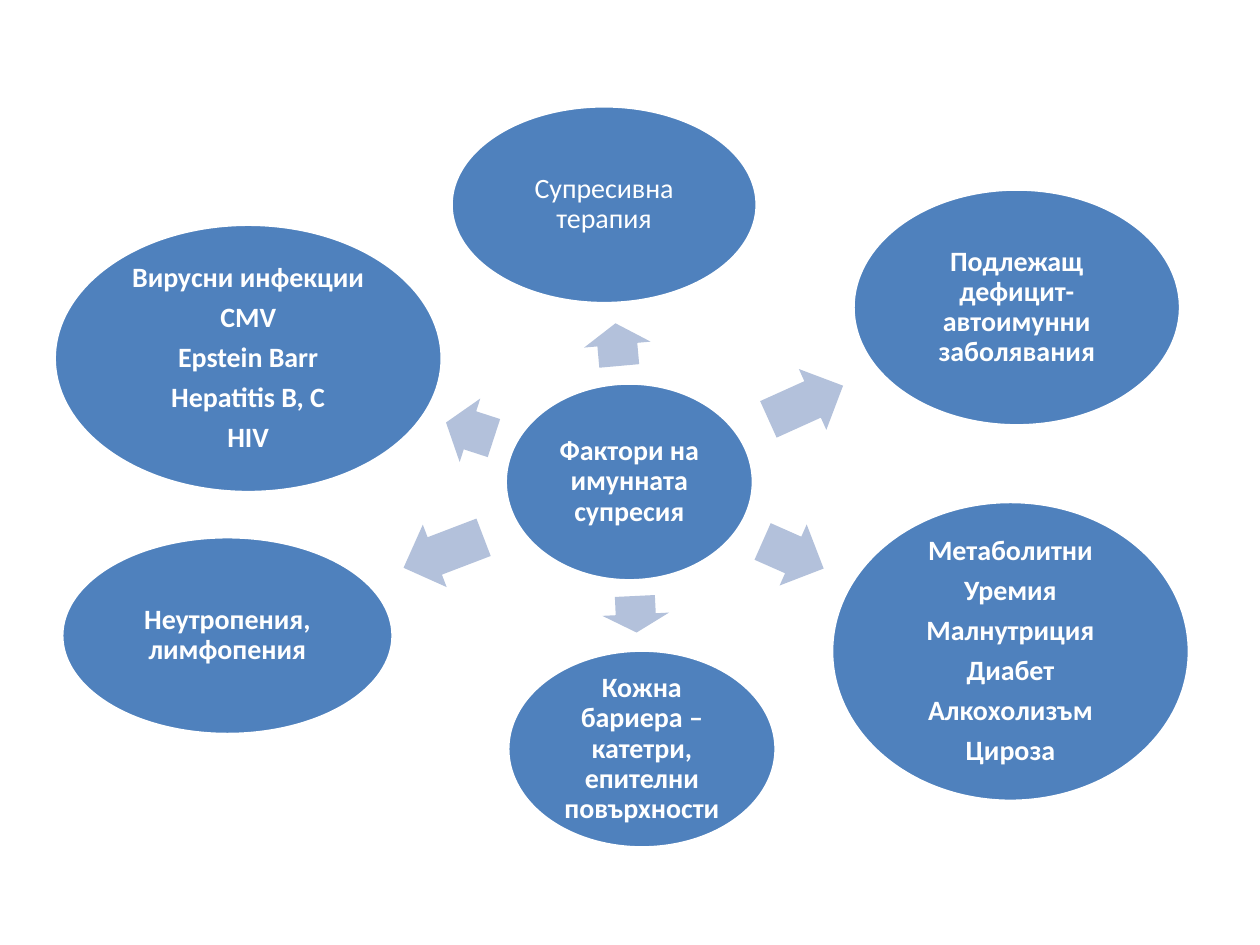
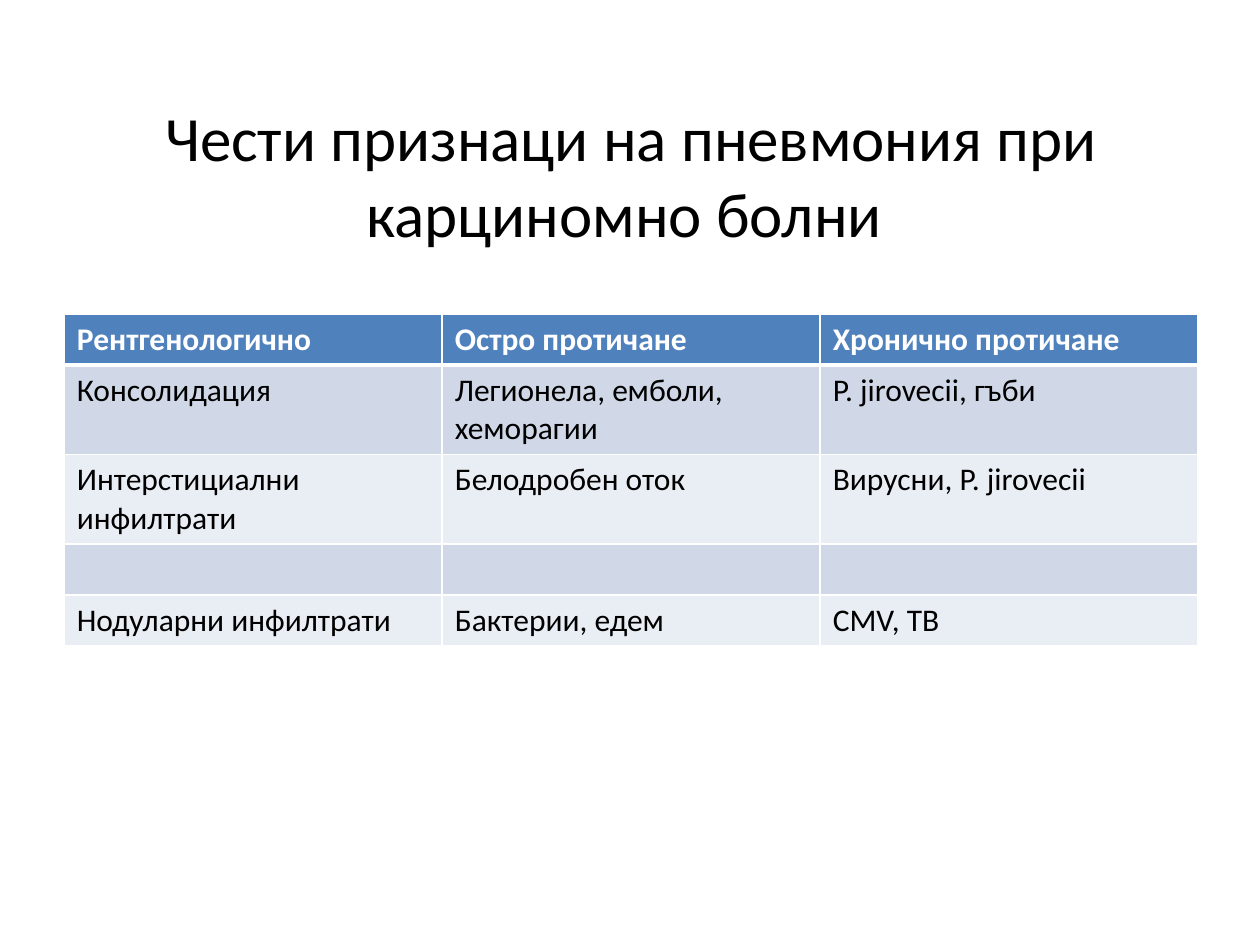
from lxml import etree
from pptx import Presentation
from pptx import util as u
from pptx.dml.color import RGBColor
from pptx.enum import shapes, text
from pptx.oxml import ns

FONT = "Calibri"
COLORS = {
    "blue": "4F81BD",
    "arrow": "B3C1DB",
    "band_dark": "D0D8E8",
    "band_light": "E9EDF4",
    "white": "FFFFFF",
    "black": "000000",
}

CENTER = ((4.01, 3.04, 1.97, 1.57), ["Фактори на имунната супресия"], True)
FACTORS = [
    ((3.58, 0.84, 2.43, 1.57), ["Супресивна терапия"], False),
    ((6.77, 1.5, 2.6, 1.88), ["Подлежащ дефицит- автоимунни заболявания"], True),
    ((6.6, 3.98, 2.84, 2.38),
     ["Метаболитни", "Уремия", "Малнутриция", "Диабет", "Алкохолизъм", "Цироза"], True),
    ((4.03, 5.16, 2.13, 1.57), ["Кожна бариера – катетри, епителни повърхности"], True),
    ((0.49, 4.26, 2.63, 1.57), ["Неутропения, лимфопения"], True),
    ((0.43, 1.78, 3.08, 2.13),
     ["Вирусни инфекции", "CMV", "Epstein Barr", "Hepatitis B, C", "HIV"], True),
]
ARROW_HEIGHT = 0.53
ARROWS = [
    (4.73, 2.47, 0.34, 264.9),
    (6.07, 2.93, 0.65, 335.7),
    (6.03, 4.14, 0.53, 23.9),
    (4.9, 4.61, 0.29, 87.2),
    (3.18, 4.12, 0.68, 159.1),
    (3.53, 3.15, 0.4, 198),
]

SIGNS = [
    ("Рентгенологично", "Остро протичане", "Хронично протичане"),
    ("Консолидация", "Легионела, емболи, хеморагии", "P. jirovecii, гъби"),
    ("Интерстициални инфилтрати", "Белодробен оток", "Вирусни, P. jirovecii"),
    ("", "", ""),
    ("Нодуларни инфилтрати", "Бактерии, едем", "CMV, TB"),
]
ROW_HEIGHTS = [0.4, 0.71, 0.71, 0.4, 0.4]


def rgb(name):
    return RGBColor.from_string(COLORS[name])


def inches(*values):
    return [u.Inches(v) for v in values]


def add_run(p, content, size, color, bold=False):
    r = p.add_run()
    r.text = content
    r.font.name = FONT
    r.font.size = u.Pt(size)
    r.font.bold = bold
    r.font.color.rgb = rgb(color)


def add_filled(s, kind, box, fill):
    sp = s.shapes.add_shape(kind, *inches(*box))
    sp.shadow.inherit = False
    sp.fill.solid()
    sp.fill.fore_color.rgb = rgb(fill)
    return sp


def add_ellipse(s, box, lines, bold):
    sp = add_filled(s, shapes.MSO_SHAPE.OVAL, box, "blue")
    sp.line.color.rgb = rgb("white")
    sp.line.width = u.Pt(2)
    tf = sp.text_frame
    tf.word_wrap = True
    tf.vertical_anchor = text.MSO_ANCHOR.MIDDLE
    tf.margin_left = tf.margin_right = tf.margin_top = tf.margin_bottom = u.Inches(0.02)
    for i, line in enumerate(lines):
        p = tf.add_paragraph() if i else tf.paragraphs[0]
        p.alignment = text.PP_ALIGN.CENTER
        p.line_spacing = 0.9
        p.space_after = u.Pt(5.6)
        add_run(p, line, 16, "white", bold)


def add_arrow(s, left, top, width, angle):
    sp = add_filled(s, shapes.MSO_SHAPE.RIGHT_ARROW, (left, top, width, ARROW_HEIGHT), "arrow")
    sp.line.fill.background()
    sp.adjustments[0] = 0.6
    sp.adjustments[1] = 0.5
    sp.rotation = angle


def add_title(s, content):
    sp = s.shapes.title
    sp.left, sp.top, sp.width, sp.height = inches(0.51, 0.76, 9, 1.25)
    tf = sp.text_frame
    tf.word_wrap = True
    tf.vertical_anchor = text.MSO_ANCHOR.MIDDLE
    p = tf.paragraphs[0]
    p.alignment = text.PP_ALIGN.CENTER
    add_run(p, content, 36, "black")


def set_border(cell, side, points):
    tc_pr = cell._tc.get_or_add_tcPr()
    ln = etree.SubElement(tc_pr, ns.qn("a:ln" + side), w=str(u.Pt(points)))
    fill = etree.SubElement(ln, ns.qn("a:solidFill"))
    etree.SubElement(fill, ns.qn("a:srgbClr"), val=COLORS["white"])


def format_cell(cell, content, row):
    header = row == 0
    widths = {"L": 1, "R": 1, "T": 3 if row == 1 else 1, "B": 3 if header else 1}
    for side, points in widths.items():
        set_border(cell, side, points)
    cell.fill.solid()
    band = "band_dark" if row % 2 else "band_light"
    cell.fill.fore_color.rgb = rgb("blue" if header else band)
    if content:
        add_run(cell.text_frame.paragraphs[0], content, 18,
                "white" if header else "black", header)


def add_sign_table(s):
    box = inches(0.51, 2.49, 9, sum(ROW_HEIGHTS))
    table = s.shapes.add_table(len(SIGNS), len(SIGNS[0]), *box).table
    for i, (height, row) in enumerate(zip(ROW_HEIGHTS, SIGNS)):
        table.rows[i].height = u.Inches(height)
        for j, content in enumerate(row):
            format_cell(table.cell(i, j), content, i)


def build_factors(prs):
    s = prs.slides.add_slide(prs.slide_layouts[6])
    add_ellipse(s, *CENTER)
    for arrow, factor in zip(ARROWS, FACTORS):
        add_arrow(s, *arrow)
        add_ellipse(s, *factor)


def build_signs(prs):
    s = prs.slides.add_slide(prs.slide_layouts[5])
    add_title(s, "Чести признаци на пневмония при карциномно болни ")
    add_sign_table(s)


def main():
    prs = Presentation()
    prs.slide_width, prs.slide_height = inches(10, 7.5)
    build_factors(prs)
    build_signs(prs)
    prs.save("out.pptx")


if __name__ == "__main__":
    main()
